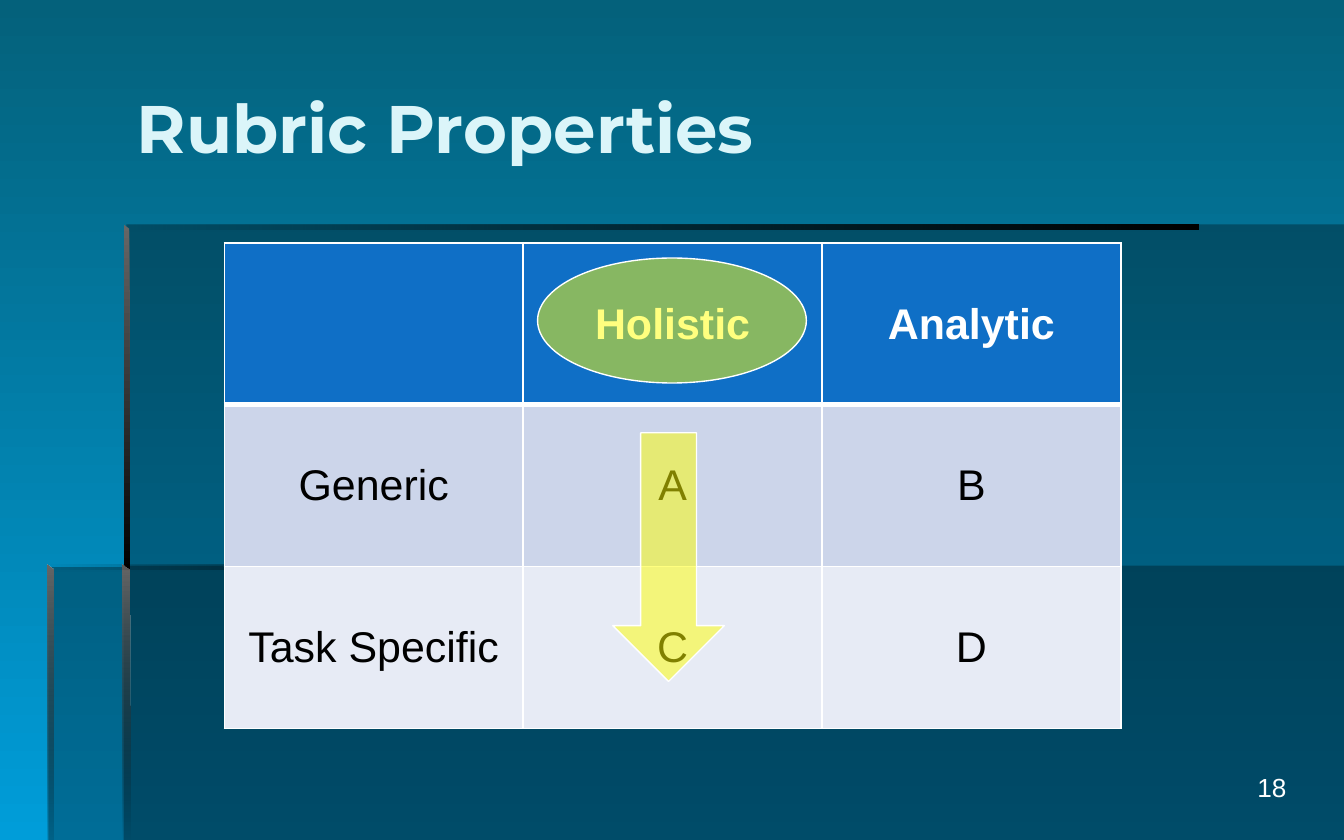
"""Build the Rubric Properties slide with its two-by-two rubric table."""
from lxml import etree
from pptx import Presentation
from pptx.dml.color import RGBColor
from pptx.enum.shapes import MSO_SHAPE
from pptx.enum.text import MSO_ANCHOR, PP_ALIGN
from pptx.oxml.ns import qn
from pptx.util import Pt

PX = 9144
OVAL, ARROW = MSO_SHAPE.OVAL, MSO_SHAPE.DOWN_ARROW
TOP, MIDDLE = MSO_ANCHOR.TOP, MSO_ANCHOR.MIDDLE
LEFT, CENTER, RIGHT = PP_ALIGN.LEFT, PP_ALIGN.CENTER, PP_ALIGN.RIGHT
BLACK, WHITE, GRAY, YELLOW = "000000", "FFFFFF", "666666", "FFFF00"


def paint(item, fill, stops, turn=0):
    if len(stops) == 1:
        fill.solid()
        fill.fore_color.rgb = RGBColor.from_string(stops[0][0])
    else:
        fill.gradient()
        fill.gradient_angle = turn
        for stop, (color, alpha) in zip(fill.gradient_stops, stops):
            stop.color.rgb = RGBColor.from_string(color)
    for node, (color, alpha) in zip(item.iter(qn("a:srgbClr")), stops):
        if alpha < 100:
            etree.SubElement(node, qn("a:alpha"), val=str(alpha * 1000))


def write(frame, text, face, size, color, bold, align):
    frame.text = text
    para = frame.paragraphs[0]
    para.alignment = align
    for run in para.runs:
        font = run.font
        font.name, font.size, font.bold = face, Pt(size), bold
        font.color.rgb = RGBColor.from_string(color)


deck = Presentation()
deck.slide_width, deck.slide_height = 1000 * PX, 625 * PX
slide = deck.slides.add_slide(deck.slide_layouts[6])
shapes = slide.shapes
paint(slide.element, slide.background.fill, [("04617B", 100), ("009DD9", 100)], 270)

shade = [(BLACK, 30)]
fade = [(BLACK, 0), (BLACK, 100)]
panels = [
    ([(92, 421), (92, 625), (1000, 625), (1000, 421)], shade, 0),
    ([(94, 422), (36, 422), (36, 625), (1000, 625), (1000, 167), (94, 167)], shade, 0),
    ([(92, 167), (92, 171), (892, 171), (892, 167)], fade, 0),
    ([(92, 167), (92, 425), (97, 425), (96, 170)], [(GRAY, 100), (BLACK, 100)], 270),
    ([(91, 625), (97, 625), (96, 424), (91, 420)], [(GRAY, 100), (BLACK, 0)], 270),
    ([(35, 420), (35, 424), (535, 424), (535, 420)], fade, 0),
    ([(35, 420), (35, 625), (40, 625), (40, 424)], [(GRAY, 100), (BLACK, 10)], 270),
]
for points, stops, turn in panels:
    pen = shapes.build_freeform(*points[0], scale=PX)
    pen.add_line_segments(points[1:], close=True)
    panel = pen.convert_to_shape()
    panel.shadow.inherit = False
    panel.line.fill.background()
    paint(panel.element, panel.fill, stops, turn)

labels = [
    ((92, 42, 792, 104), MIDDLE, "Rubric Properties", "Montserrat", 36, "DBF5F9", True, LEFT),
    ((759, 569, 208, 43), TOP, "18", "Arial", 14, WHITE, False, RIGHT),
]
for place, anchor, *style in labels:
    frame = shapes.add_textbox(*[n * PX for n in place]).text_frame
    frame.word_wrap = True
    frame.vertical_anchor = anchor
    write(frame, *style)

rows = [
    (["", "Holistic", "Analytic"], "0F6FC6", WHITE, True, 1, 3),
    (["Generic", "A", "B"], "CCD5EA", BLACK, False, 3, 1),
    (["Task Specific", "C", "D"], "E7EBF5", BLACK, False, 1, 1),
]
grid = shapes.add_table(3, 3, 167 * PX, 181 * PX, 667 * PX, 361 * PX).table
for r, (words, back, ink, bold, above, below) in enumerate(rows):
    for c, word in enumerate(words):
        cell = grid.cell(r, c)
        cell.vertical_anchor = MIDDLE
        cell.margin_top = cell.margin_bottom = 4 * PX
        write(cell.text_frame, word, "Arial", 23, ink, bold, CENTER)
        props = cell._tc.get_or_add_tcPr()
        for side, width in zip("LRTB", (1, 1, above, below)):
            edge = etree.SubElement(props, qn(f"a:ln{side}"), w=str(Pt(width)))
            solid = etree.SubElement(edge, qn("a:solidFill"))
            etree.SubElement(solid, qn("a:srgbClr"), val=WHITE)
        cell.fill.solid()
        cell.fill.fore_color.rgb = RGBColor.from_string(back)

for kind, place in [(OVAL, (400, 192, 200, 93)), (ARROW, (456, 322, 83, 185))]:
    mark = shapes.add_shape(kind, *[n * PX for n in place])
    mark.shadow.inherit = False
    paint(mark.element, mark.fill, [(YELLOW, 50)])
    mark.line.color.rgb = RGBColor.from_string(WHITE)
    mark.line.width = Pt(0.75)

deck.save("out.pptx")
